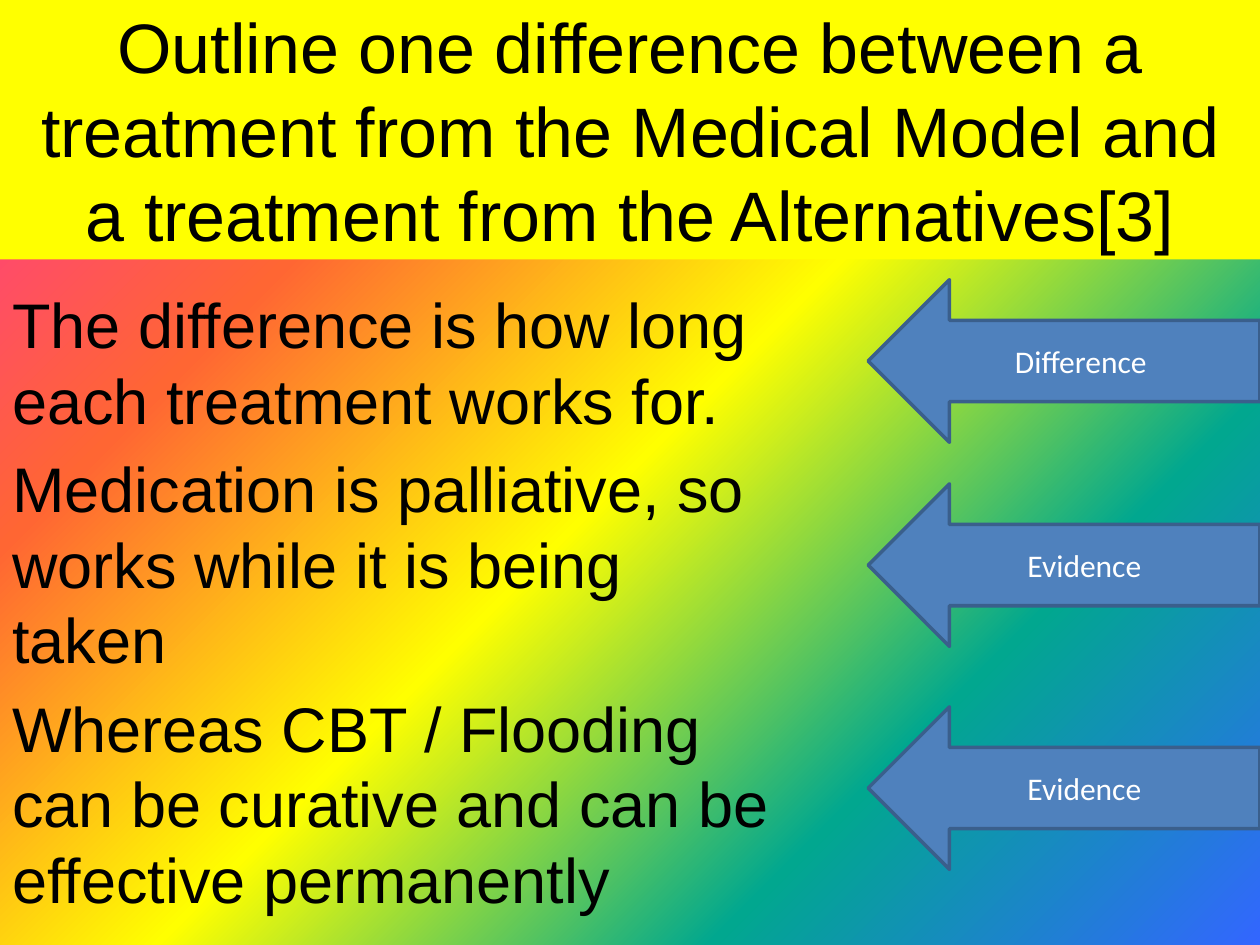
import pptx
import pptx.util
import pptx.dml.color
import pptx.enum.shapes
import pptx.enum.text
import pptx.oxml.ns
from lxml import etree
from pptx.util import Inches, Pt

COLORS = {
    "title_fill": "FFFF00",
    "text": "000000",
    "arrow_fill": "4F81BD",
    "arrow_line": "3A5F8C",
    "arrow_text": "FFFFFF",
}
RAINBOW = [(0, "FF3399"), (25, "FF6633"), (50, "FFFF00"), (75, "01A78F"), (100, "3366FF")]
TITLE = ("Outline one difference between a treatment from the Medical Model "
         "and a treatment from the Alternatives[3]")
ANSWER = [
    "The difference is how long each treatment works for.",
    "Medication is palliative, so works while it is being taken",
    "Whereas CBT / Flooding can be curative and can be effective permanently",
]
ARROWS = [("Difference ", 2.22), ("Evidence", 3.84), ("Evidence", 5.61)]


def rgb(name):
    return pptx.dml.color.RGBColor.from_string(COLORS[name])


def set_background(s):
    """Fill the slide with the diagonal rainbow gradient."""
    qn = pptx.oxml.ns.qn
    fill = s.background.fill
    fill.gradient()
    fill.gradient_angle = 315
    stops = next(s.element.iter(qn("a:gsLst")))
    for stop in list(stops):
        stops.remove(stop)
    for percent, color in RAINBOW:
        stop = etree.SubElement(stops, qn("a:gs"), pos=str(percent * 1000))
        etree.SubElement(stop, qn("a:srgbClr"), val=color)


def write(sp, paragraphs, font, size, color, align, anchor):
    tf = sp.text_frame
    tf.word_wrap = True
    tf.vertical_anchor = anchor
    for i, text in enumerate(paragraphs):
        p = tf.add_paragraph() if i else tf.paragraphs[0]
        p.alignment = align
        if i:
            p.space_before = Pt(size * 0.2)
        r = p.add_run()
        r.text = text
        r.font.name = font
        r.font.size = Pt(size)
        r.font.color.rgb = rgb(color)


def add_title(s):
    sp = s.shapes.add_textbox(0, 0, Inches(10), Inches(2.06))
    sp.fill.solid()
    sp.fill.fore_color.rgb = rgb("title_fill")
    write(sp, [TITLE], "Arial", 40, "text",
          pptx.enum.text.PP_ALIGN.CENTER, pptx.enum.text.MSO_ANCHOR.MIDDLE)


def add_answer(s):
    sp = s.shapes.add_textbox(0, Inches(2.22), Inches(6.38), Inches(2.42))
    write(sp, ANSWER, "Arial", 36, "text",
          pptx.enum.text.PP_ALIGN.LEFT, pptx.enum.text.MSO_ANCHOR.TOP)


def add_arrow(s, label, top):
    sp = s.shapes.add_shape(pptx.enum.shapes.MSO_SHAPE.LEFT_ARROW,
                            Inches(6.89), Inches(top), Inches(3.11), Inches(1.29))
    sp.shadow.inherit = False
    sp.fill.solid()
    sp.fill.fore_color.rgb = rgb("arrow_fill")
    sp.line.color.rgb = rgb("arrow_line")
    sp.line.width = Pt(2)
    write(sp, [label], "Calibri", 18, "arrow_text",
          pptx.enum.text.PP_ALIGN.CENTER, pptx.enum.text.MSO_ANCHOR.MIDDLE)


def main():
    prs = pptx.Presentation()
    prs.slide_width, prs.slide_height = Inches(10), Inches(7.5)
    s = prs.slides.add_slide(prs.slide_layouts[6])
    set_background(s)
    add_title(s)
    add_answer(s)
    for label, top in ARROWS:
        add_arrow(s, label, top)
    prs.save("out.pptx")


if __name__ == "__main__":
    main()
